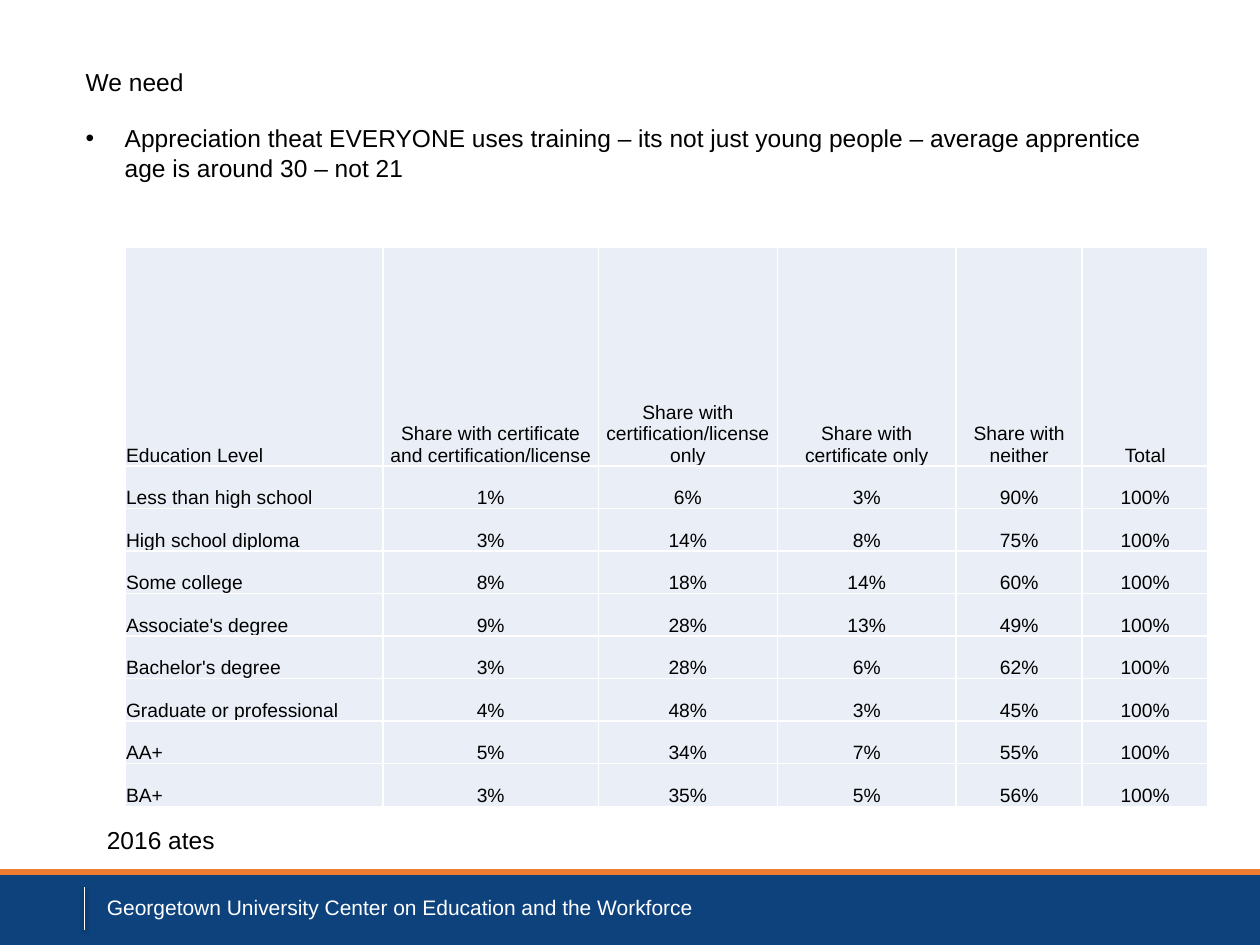
from dataclasses import dataclass

from lxml import etree
from pptx import Presentation
from pptx.dml.color import RGBColor
from pptx.enum.shapes import MSO_CONNECTOR, MSO_SHAPE
from pptx.enum.text import MSO_ANCHOR, MSO_AUTO_SIZE, PP_ALIGN
from pptx.oxml import parse_xml
from pptx.oxml.ns import nsdecls, qn
from pptx.util import Inches, Pt

STRAIGHT = MSO_CONNECTOR.STRAIGHT
RECTANGLE = MSO_SHAPE.RECTANGLE
TOP, MIDDLE, BOTTOM = MSO_ANCHOR.TOP, MSO_ANCHOR.MIDDLE, MSO_ANCHOR.BOTTOM
LEFT, CENTER = PP_ALIGN.LEFT, PP_ALIGN.CENTER
NO_AUTOFIT = MSO_AUTO_SIZE.NONE


@dataclass(frozen=True)
class Theme:
    font: str = "Arial"
    ink: str = "000000"
    white: str = "FFFFFF"
    navy: str = "0D427C"
    orange: str = "ED7D31"
    cell: str = "EAEFF7"
    body_size: int = 14
    footer_size: int = 12
    table_size: int = 11


THEME = Theme()

COLUMN_WIDTHS = [2.05, 1.71, 1.42, 1.42, 1, 1]
TABLE_HEIGHT = 4.44
HEADER_HEIGHT = 1.74
HEADINGS = [
    "Education Level",
    "Share with certificate and certification/license",
    "Share with certification/license only",
    "Share with certificate only",
    "Share with neither",
    "Total",
]
SHARES = [
    ("Less than high school", 1, 6, 3, 90),
    ("High school diploma", 3, 14, 8, 75),
    ("Some college", 8, 18, 14, 60),
    ("Associate's degree", 9, 28, 13, 49),
    ("Bachelor's degree", 3, 28, 6, 62),
    ("Graduate or professional", 4, 48, 3, 45),
    ("AA+", 5, 34, 7, 55),
    ("BA+", 3, 35, 5, 56),
]


def rgb(value):
    return RGBColor.from_string(value)


def place(shape, left, top, width, height):
    shape.left, shape.top = Inches(left), Inches(top)
    shape.width, shape.height = Inches(width), Inches(height)


def write(frame, text, size, color=THEME.ink, align=LEFT, anchor=TOP):
    """Fill the first paragraph of a text frame with one formatted run."""
    frame.word_wrap = True
    frame.vertical_anchor = anchor
    paragraph = frame.paragraphs[0]
    paragraph.alignment = align
    run = paragraph.add_run()
    run.text = text
    run.font.name = THEME.font
    run.font.size = Pt(size)
    run.font.color.rgb = rgb(color)
    return paragraph


def set_effects(shape, shadow=None):
    """Set a downward shadow of (opacity %, blur pt, distance pt), or none."""
    effects = etree.SubElement(shape._element.spPr, qn("a:effectLst"))
    if shadow:
        opacity, blur, distance = shadow
        effects.append(parse_xml(
            f'<a:outerShdw {nsdecls("a")} blurRad="{Pt(blur)}" '
            f'dist="{Pt(distance)}" dir="5400000" rotWithShape="0">'
            f'<a:srgbClr val="{THEME.ink}"><a:alpha val="{opacity * 1000}"/>'
            '</a:srgbClr></a:outerShdw>'))


def add_line(slide, start, end, color, weight, shadow=None):
    line = slide.shapes.add_connector(
        STRAIGHT, *(Inches(value) for value in (*start, *end)))
    line.line.color.rgb = rgb(color)
    line.line.width = Pt(weight)
    set_effects(line, shadow)


def add_label(slide, box, text, size, color=THEME.ink, anchor=TOP):
    label = slide.shapes.add_textbox(*(Inches(value) for value in box))
    write(label.text_frame, text, size, color, anchor=anchor)


def add_footer(slide):
    band = slide.shapes.add_shape(
        RECTANGLE, Inches(0), Inches(6.92), Inches(10), Inches(0.58))
    band.fill.solid()
    band.fill.fore_color.rgb = rgb(THEME.navy)
    band.line.fill.background()
    set_effects(band, (35, 3.1, 1.8))
    add_line(slide, (0.67, 7.04), (0.67, 7.38), THEME.white, 1, (38, 3.1, 1.6))
    add_label(slide, (0.75, 7, 5.5, 0.4),
              "Georgetown University Center on Education and the Workforce",
              THEME.footer_size, THEME.white, MIDDLE)
    add_line(slide, (0, 6.92), (10, 6.92), THEME.orange, 3)


def fill_placeholder(placeholder, box, text):
    place(placeholder, *box)
    paragraph = write(placeholder.text_frame, text, THEME.body_size)
    placeholder.text_frame.auto_size = NO_AUTOFIT
    paragraph.space_before = Pt(0)
    return paragraph


def add_bullet(paragraph, indent):
    properties = paragraph._p.get_or_add_pPr()
    properties.set("marL", str(Inches(indent)))
    properties.set("indent", str(-Inches(indent)))
    font = etree.SubElement(properties, qn("a:buFont"))
    font.set("typeface", THEME.font)
    etree.SubElement(properties, qn("a:buChar")).set("char", "•")


def add_borders(cell):
    properties = cell._tc.get_or_add_tcPr()
    for position, side in enumerate(("lnL", "lnR", "lnT", "lnB")):
        properties.insert(position, parse_xml(
            f'<a:{side} {nsdecls("a")} w="{Pt(1)}"><a:solidFill>'
            f'<a:srgbClr val="{THEME.white}"/></a:solidFill></a:{side}>'))


def format_cell(cell, text, align):
    cell.margin_left = cell.margin_right = cell.margin_top = Inches(0.01)
    cell.margin_bottom = 0
    cell.vertical_anchor = BOTTOM
    write(cell.text_frame, text, THEME.table_size, align=align, anchor=None)
    cell.fill.solid()
    cell.fill.fore_color.rgb = rgb(THEME.cell)
    add_borders(cell)


def add_share_table(slide):
    rows = [HEADINGS]
    for level, *shares in SHARES:
        rows.append([level, *(f"{share}%" for share in (*shares, 100))])
    table = slide.shapes.add_table(
        len(rows), len(HEADINGS), Inches(0.99), Inches(1.96),
        Inches(sum(COLUMN_WIDTHS)), Inches(TABLE_HEIGHT)).table
    table.first_row = table.horz_banding = False
    for column, width in zip(table.columns, COLUMN_WIDTHS):
        column.width = Inches(width)
    row_height = (TABLE_HEIGHT - HEADER_HEIGHT) / len(SHARES)
    for row_index, texts in enumerate(rows):
        table.rows[row_index].height = Inches(
            row_height if row_index else HEADER_HEIGHT)
        for column_index, text in enumerate(texts):
            format_cell(table.cell(row_index, column_index), text,
                        CENTER if column_index else LEFT)


def main():
    deck = Presentation()
    deck.slide_width, deck.slide_height = Inches(10), Inches(7.5)
    slide = deck.slides.add_slide(deck.slide_layouts[1])
    add_footer(slide)
    add_share_table(slide)
    add_label(slide, (0.75, 6.5, 1.2, 0.4), "2016 ates", THEME.body_size)
    fill_placeholder(slide.shapes.title, (0.58, 0.48, 8.92, 0.34), "We need")
    need = fill_placeholder(
        slide.placeholders[1], (0.58, 0.93, 8.92, 0.59),
        "Appreciation theat EVERYONE uses training – its not just young people "
        "– average apprentice age is around 30 – not 21")
    add_bullet(need, 0.31)
    deck.save("out.pptx")


if __name__ == "__main__":
    main()
